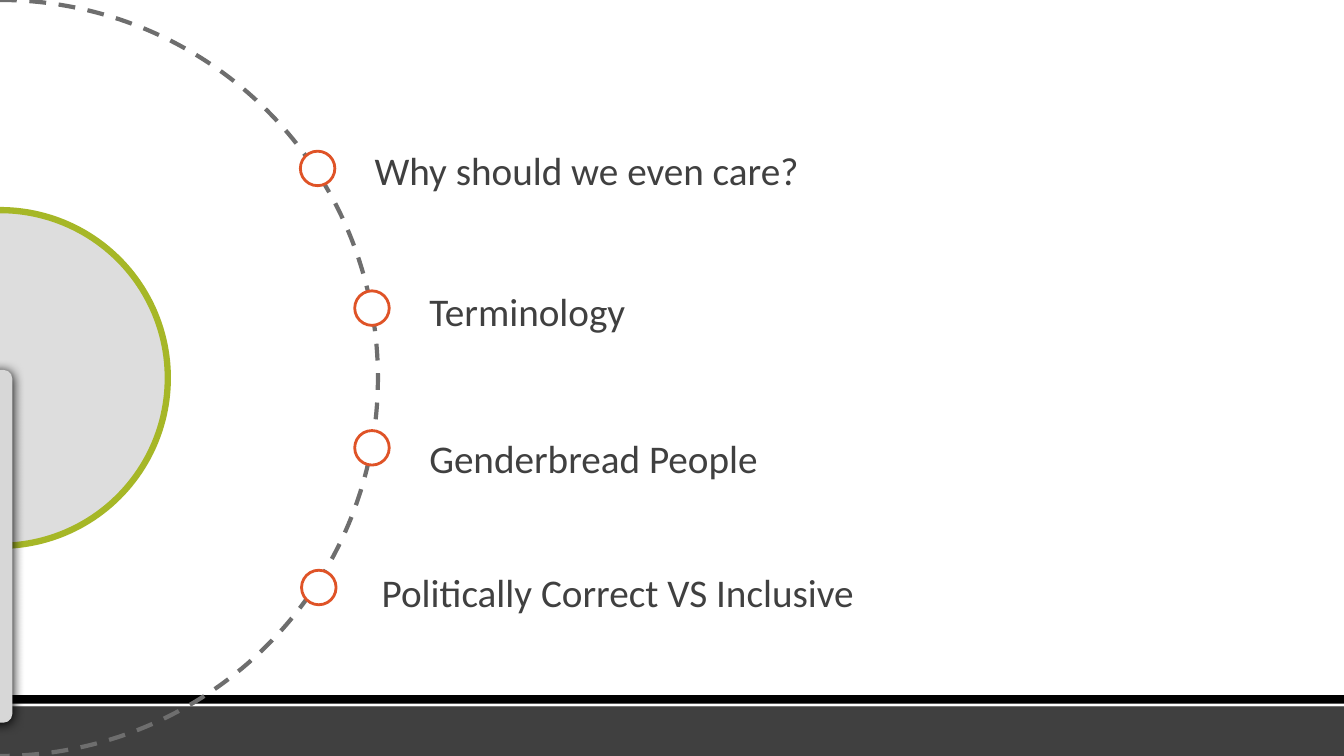
from dataclasses import dataclass

from lxml import etree
from pptx import Presentation
from pptx.dml.color import RGBColor
from pptx.enum.dml import MSO_LINE
from pptx.enum.shapes import MSO_SHAPE
from pptx.enum.text import MSO_ANCHOR, MSO_AUTO_SIZE, PP_ALIGN
from pptx.oxml.ns import qn
from pptx.util import Cm, Pt

RECTANGLE = MSO_SHAPE.RECTANGLE
ROUNDED = MSO_SHAPE.ROUNDED_RECTANGLE
OVAL = MSO_SHAPE.OVAL
ARC = MSO_SHAPE.ARC
DASH = MSO_LINE.DASH
MIDDLE = MSO_ANCHOR.MIDDLE
GROW = MSO_AUTO_SIZE.SHAPE_TO_FIT_TEXT
LEFT = PP_ALIGN.LEFT


@dataclass(frozen=True)
class Theme:
    """Colours and type sizes of the slide."""

    font: str = "Calibri"
    label_size: int = 28
    text: str = "404040"
    paper: str = "FFFFFF"
    bar: str = "404040"
    rule: str = "000000"
    ring: str = "6E6E6E"
    marker: str = "DF5327"
    hub: str = "DDDDDD"
    hub_edge: str = "A6B727"
    tab: str = "D7D7D7"
    shadow: str = "000000"


THEME = Theme()
WIDTH, HEIGHT = 33.87, 19.05
MARKER_SIZE, MARKER_TOP, MARKER_STEP = 0.87, 3.81, 3.52
FOOTER = [
    (17.78, 1.27, THEME.bar),
    (17.52, 0.28, THEME.rule),
    (17.73, 0.07, THEME.paper),
]
TOPICS = [
    ("Why should we even care?", 9.19, 3.56, 7.57),
    ("Terminology", 10.57, 7.11, 8.94),
    ("Genderbread People", 10.57, 10.8, 8.94),
    ("Politically Correct VS Inclusive", 9.37, 14.2, 7.6),
]


def apply_format(target, values):
    """Set every attribute named in a dict of format values."""
    for name, value in values.items():
        setattr(target, name, value)


def add_figure(slide, kind, box, fill=None, line=None, width=0):
    """Add a preset shape with an optional fill and outline."""
    shape = slide.shapes.add_shape(kind, *(Cm(length) for length in box))
    shape.shadow.inherit = False
    if fill:
        shape.fill.solid()
        shape.fill.fore_color.rgb = RGBColor.from_string(fill)
    else:
        shape.fill.background()
    if line:
        shape.line.color.rgb = RGBColor.from_string(line)
        shape.line.width = Pt(width)
    else:
        shape.line.fill.background()
    return shape


def add_half_circle(slide, radius, end, fill, line, width):
    """Add the right half of a circle centred on the left slide edge."""
    box = (-radius, HEIGHT / 2 - radius, 2 * radius, 2 * radius)
    shape = add_figure(slide, ARC, box, fill, line, width)
    shape.adjustments[0] = 162
    shape.adjustments[1] = end
    return shape


def add_label(slide, text, left, top):
    """Add one topic label."""
    box = slide.shapes.add_textbox(Cm(left), Cm(top), Cm(20.32), Cm(1.45))
    frame = box.text_frame
    apply_format(frame, {"word_wrap": True, "auto_size": GROW, "vertical_anchor": MIDDLE})
    paragraph = frame.paragraphs[0]
    paragraph.alignment = LEFT
    run = paragraph.add_run()
    run.text = text
    apply_format(run.font, {"name": THEME.font, "size": Pt(THEME.label_size)})
    run.font.color.rgb = RGBColor.from_string(THEME.text)


def add_shadow(shape, blur, distance):
    """Give a shape a soft shadow that falls downwards on the slide."""
    effects = shape.fill._xPr.find(qn("a:effectLst"))
    shadow = etree.SubElement(effects, qn("a:outerShdw"))
    values = {"blurRad": Pt(blur), "dist": Pt(distance), "dir": 5400000, "rotWithShape": 0}
    for name, value in values.items():
        shadow.set(name, str(int(value)))
    etree.SubElement(shadow, qn("a:srgbClr"), val=THEME.shadow)


def add_side_tab(slide):
    """Add the rounded tab at the left slide edge."""
    tab = add_figure(slide, ROUNDED, (-0.33, 9.32, 0.64, 8.89), THEME.tab)
    tab.adjustments[0] = 0.35
    tab.rotation = 180
    add_shadow(tab, 8.5, 1)


def main():
    """Build the agenda slide and save it."""
    presentation = Presentation()
    apply_format(presentation, {"slide_width": Cm(WIDTH), "slide_height": Cm(HEIGHT)})
    slide = presentation.slides.add_slide(presentation.slide_layouts[6])
    for top, height, colour in FOOTER:
        add_figure(slide, RECTANGLE, (0, top, WIDTH, height), colour)
    ring = add_half_circle(slide, HEIGHT / 2, 54.07, None, THEME.ring, 3)
    ring.line.dash_style = DASH
    for text, left, top, _ in TOPICS:
        add_label(slide, text, left, top)
    for index, (_, _, _, left) in enumerate(TOPICS):
        box = (left, MARKER_TOP + index * MARKER_STEP, MARKER_SIZE, MARKER_SIZE)
        add_figure(slide, OVAL, box, THEME.paper, THEME.marker, 2)
    add_half_circle(slide, 4.23, 53.6, THEME.hub, THEME.hub_edge, 4.5)
    add_side_tab(slide)
    presentation.save("out.pptx")


if __name__ == "__main__":
    main()
